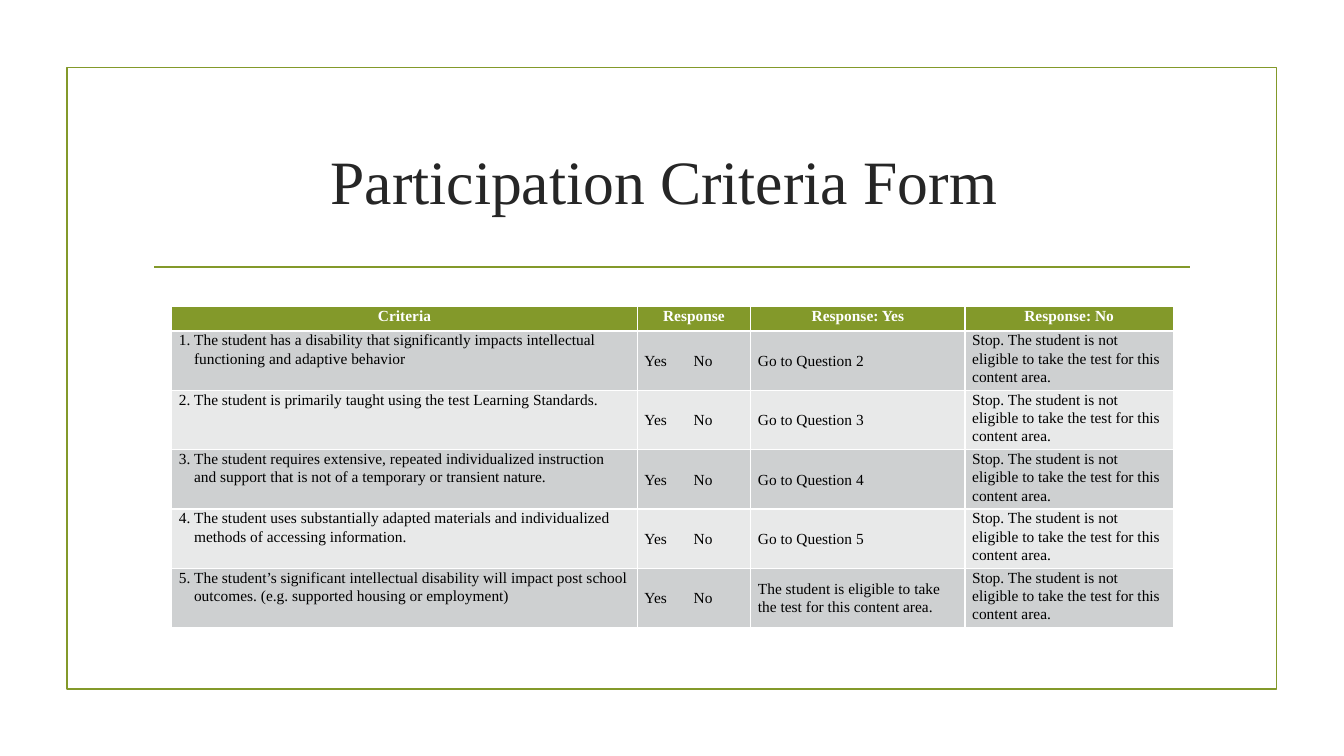
import pptx
import pptx.dml.color
import pptx.enum.shapes
import pptx.enum.text
import pptx.util
from lxml import etree
from pptx.oxml.ns import qn

Cm, Pt = pptx.util.Cm, pptx.util.Pt
RGBColor = pptx.dml.color.RGBColor
ALIGN = pptx.enum.text.PP_ALIGN
ANCHOR = pptx.enum.text.MSO_ANCHOR

TITLE = "Participation Criteria Form"
HEADINGS = ["Criteria", "Response", "Response: Yes", "Response: No"]
ANSWERS = "Yes\tNo"
IF_NO = "Stop. The student is not eligible to take the test for this content area."
CRITERIA = [
    ("The student has a disability that significantly impacts intellectual "
     "functioning and adaptive behavior", "Go to Question 2"),
    ("The student is primarily taught using the test Learning Standards.",
     "Go to Question 3"),
    ("The student requires extensive, repeated individualized instruction and "
     "support that is not of a temporary or transient nature.", "Go to Question 4"),
    ("The student uses substantially adapted materials and individualized "
     "methods of accessing information.", "Go to Question 5"),
    ("The student’s significant intellectual disability will impact post school "
     "outcomes. (e.g. supported housing or employment)",
     "The student is eligible to take the test for this content area."),
]

FONT = "Times New Roman"
GREEN = RGBColor(0x83, 0x99, 0x2A)
CHARCOAL = RGBColor(0x26, 0x26, 0x26)
BLACK = RGBColor(0, 0, 0)
WHITE = RGBColor(0xFF, 0xFF, 0xFF)
BANDS = [RGBColor(0xCE, 0xD0, 0xD1), RGBColor(0xE8, 0xE9, 0xE9)]

COLUMN_WIDTHS = [Cm(11.73), Cm(2.86), Cm(5.4), Cm(5.25)]
HEADING_HEIGHT, CRITERION_HEIGHT = Cm(0.61), Cm(1.35)
HANGING = Cm(0.38)
NO_TAB = Cm(1.24)


def style_runs(paragraph, size, color, bold=False):
    for run in paragraph.runs:
        run.font.name = FONT
        run.font.size = Pt(size)
        run.font.color.rgb = color
        run.font.bold = bold


def fill_cell(cell, text, fill, color, heading=False):
    """Fill one cell; the table's own style draws the white borders."""
    cell.fill.solid()
    cell.fill.fore_color.rgb = fill
    cell.margin_left = cell.margin_right = Cm(0.18)
    cell.margin_top = cell.margin_bottom = 0
    paragraph = cell.text_frame.paragraphs[0]
    paragraph.text = text
    paragraph.line_spacing = 1.07
    paragraph.alignment = ALIGN.CENTER if heading else ALIGN.LEFT
    style_runs(paragraph, 11, color, heading)
    return paragraph


deck = pptx.Presentation()
deck.slide_width, deck.slide_height = Cm(33.87), Cm(19.05)
slide = deck.slides.add_slide(deck.slide_layouts[6])

frame = slide.shapes.add_shape(pptx.enum.shapes.MSO_SHAPE.RECTANGLE,
                               Cm(1.69), Cm(1.7), Cm(30.48), Cm(15.67))
frame.shadow.inherit = False
frame.fill.background()

rule = slide.shapes.add_connector(pptx.enum.shapes.MSO_CONNECTOR.STRAIGHT,
                                  Cm(3.89), Cm(6.73), Cm(30), Cm(6.73))
etree.SubElement(rule._element.spPr, qn("a:effectLst"))
for outline in (frame.line, rule.line):
    outline.color.rgb = GREEN
    outline.width = Pt(1.25)

title = slide.shapes.add_textbox(Cm(3.41), Cm(2.72), Cm(26.67), Cm(3.63)).text_frame
title.word_wrap = True
title.vertical_anchor = ANCHOR.MIDDLE
title.text = TITLE
title.paragraphs[0].alignment = ALIGN.CENTER
style_runs(title.paragraphs[0], 44, CHARCOAL)

form = slide.shapes.add_table(
    len(CRITERIA) + 1, len(HEADINGS), Cm(4.33), Cm(7.73), sum(COLUMN_WIDTHS),
    HEADING_HEIGHT + CRITERION_HEIGHT * len(CRITERIA)).table
for column, width in zip(form.columns, COLUMN_WIDTHS):
    column.width = width
for number, row in enumerate(form.rows):
    row.height = CRITERION_HEIGHT if number else HEADING_HEIGHT

for column, heading in enumerate(HEADINGS):
    fill_cell(form.cell(0, column), heading, GREEN, WHITE, heading=True)

for number, (criterion, if_yes) in enumerate(CRITERIA, start=1):
    band = BANDS[(number - 1) % 2]
    texts = [f"{number}. {criterion}", ANSWERS, if_yes, IF_NO]
    cells = [form.cell(number, column) for column in range(len(texts))]
    criterion_line, answer_line, _, _ = [
        fill_cell(cell, text, band, BLACK) for cell, text in zip(cells, texts)]

    indent = criterion_line._p.get_or_add_pPr()
    indent.set("marL", str(HANGING))
    indent.set("indent", str(-HANGING))
    tabs = etree.SubElement(answer_line._p.get_or_add_pPr(), qn("a:tabLst"))
    etree.SubElement(tabs, qn("a:tab"), pos=str(NO_TAB), algn="l")
    for cell in cells[1:3]:
        cell.vertical_anchor = ANCHOR.MIDDLE

deck.save("out.pptx")
